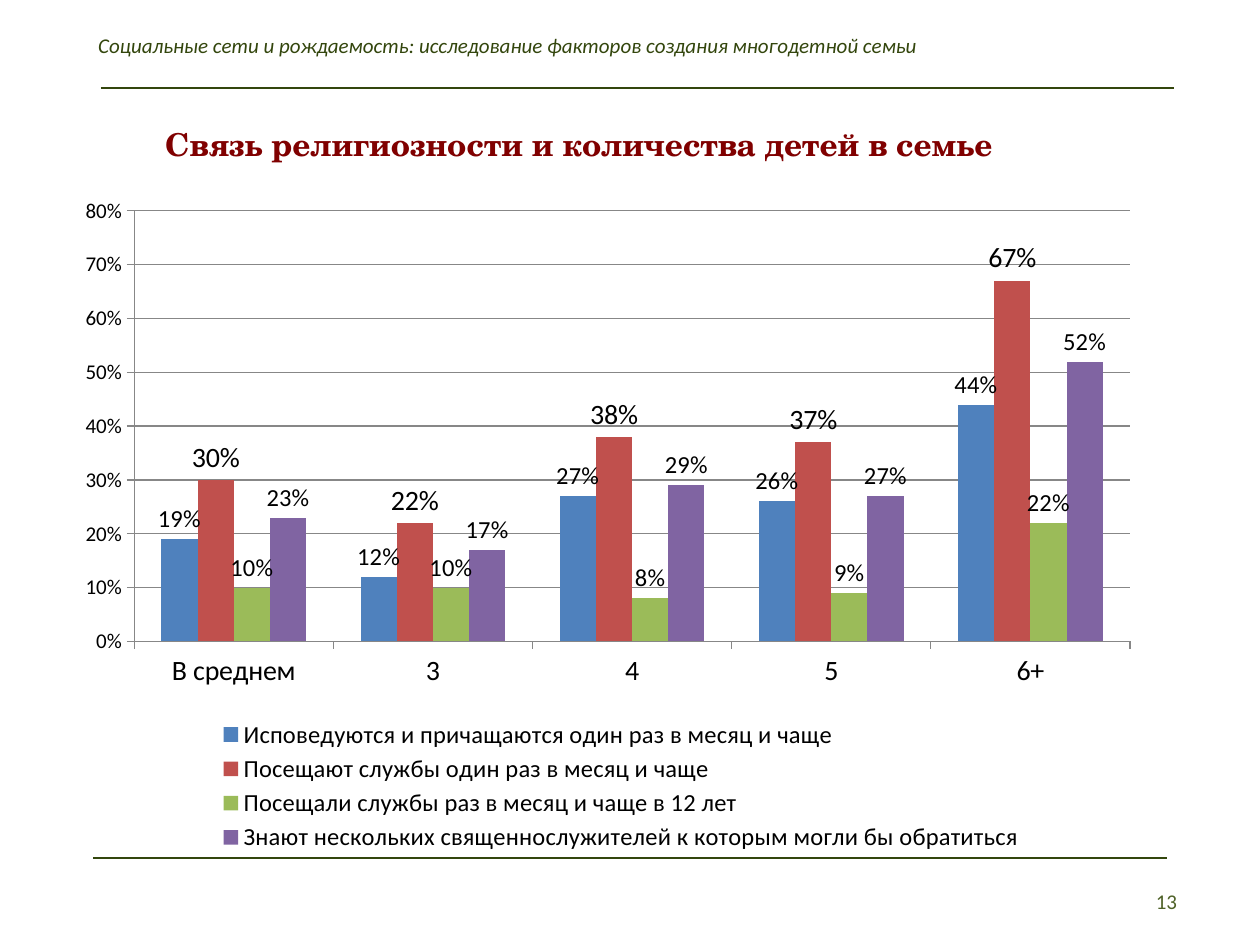
from lxml.etree import SubElement
from pptx import Presentation
from pptx.chart.data import CategoryChartData
from pptx.dml.color import RGBColor
from pptx.enum.chart import (XL_CHART_TYPE, XL_LABEL_POSITION,
                             XL_LEGEND_POSITION, XL_TICK_MARK)
from pptx.enum.shapes import MSO_CONNECTOR
from pptx.enum.text import MSO_ANCHOR, PP_ALIGN
from pptx.oxml import parse_xml
from pptx.oxml.ns import nsdecls, qn
from pptx.util import Pt

BLACK = RGBColor(0x00, 0x00, 0x00)
GREY = RGBColor(0x87, 0x87, 0x87)
OLIVE = RGBColor(0x33, 0x46, 0x0D)
GREEN = RGBColor(0x4F, 0x62, 0x28)
MAROON = RGBColor(0x80, 0x00, 0x00)

FAMILY_SIZES = ["В среднем", "3", "4", "5", "6+"]
# name, shares, colour, label size, label format
INDICATORS = [
    ("Исповедуются и причащаются один раз в месяц и чаще",
     (0.19, 0.12, 0.27, 0.26, 0.44), RGBColor(0x4F, 0x81, 0xBD), 14, "0%"),
    ("Посещают службы один раз в месяц и чаще",
     (0.30, 0.22, 0.38, 0.37, 0.67), RGBColor(0xC0, 0x50, 0x4D), 16, "0%"),
    ("Посещали службы раз в месяц и чаще в 12 лет",
     (0.10, 0.10, 0.08, 0.09, 0.22), RGBColor(0x9B, 0xBB, 0x59), 14, "0%"),
    ("Знают нескольких священнослужителей к которым могли бы обратиться",
     (0.23, 0.17, 0.29, 0.27, 0.52), RGBColor(0x80, 0x64, 0xA2), 14, "###0%"),
]


def set_layout(element, index, x, y, w, h, inner=False):
    """Fix a chart part's place, in fractions of the chart area."""
    for old_layout in element.findall(qn("c:layout")):
        element.remove(old_layout)
    target = '<c:layoutTarget val="inner"/>' if inner else ""
    element.insert(index, parse_xml(
        f'<c:layout {nsdecls("c")}><c:manualLayout>{target}'
        '<c:xMode val="edge"/><c:yMode val="edge"/>'
        f'<c:x val="{x}"/><c:y val="{y}"/><c:w val="{w}"/><c:h val="{h}"/>'
        '</c:manualLayout></c:layout>'))


class SlideBuilder:
    body_font = "Calibri"
    title_font = "TeX Gyre Schola"

    def __init__(self, slide):
        self.slide = slide

    def fill_text(self, shape, text, size, color, font=body_font,
                  align=PP_ALIGN.LEFT, anchor=MSO_ANCHOR.TOP,
                  bold=False, italic=False):
        frame = shape.text_frame
        frame.word_wrap = True
        frame.vertical_anchor = anchor
        paragraph = frame.paragraphs[0]
        paragraph.text = text
        paragraph.alignment = align
        style = paragraph.font
        style.name, style.size = font, Pt(size)
        style.bold, style.italic = bold, italic
        style.color.rgb = color

    def title(self, text, left, top, width, height):
        heading = self.slide.shapes.title
        heading.left, heading.top = Pt(left), Pt(top)
        heading.width, heading.height = Pt(width), Pt(height)
        self.fill_text(heading, text, 18, MAROON, self.title_font, bold=True)

    def text(self, text, left, top, width, height, color, **style):
        box = self.slide.shapes.add_textbox(Pt(left), Pt(top), Pt(width), Pt(height))
        self.fill_text(box, text, 12, color, **style)

    def rule(self, left, right, y):
        line = self.slide.shapes.add_connector(
            MSO_CONNECTOR.STRAIGHT, Pt(left), Pt(y), Pt(right), Pt(y))
        line.line.color.rgb = OLIVE
        line.line.width = Pt(1)
        SubElement(line._element.spPr, qn("a:effectLst"))

    def column_chart(self, categories, indicators, left, top, width, height):
        data = CategoryChartData(number_format="0%")
        data.categories = categories
        for name, shares, *_ in indicators:
            data.add_series(name, shares)
        chart = self.slide.shapes.add_chart(
            XL_CHART_TYPE.COLUMN_CLUSTERED, Pt(left), Pt(top),
            Pt(width), Pt(height), data).chart
        chart.has_title = False
        chart.font.name, chart.font.size = self.body_font, Pt(10)
        chart.font.color.rgb = BLACK

        plot = chart.plots[0]
        plot.gap_width, plot.overlap = 150, 0
        plot.vary_by_categories = False
        for series, (_, _, color, size, number_format) in zip(plot.series, indicators):
            series.format.fill.solid()
            series.format.fill.fore_color.rgb = color
            series.invert_if_negative = False
            labels = series.data_labels
            labels.show_value = True
            labels.position = XL_LABEL_POSITION.OUTSIDE_END
            labels.number_format = number_format
            labels.number_format_is_linked = False
            labels.font.size = Pt(size)

        for axis, size in ((chart.category_axis, 16), (chart.value_axis, 12)):
            axis.major_tick_mark = XL_TICK_MARK.OUTSIDE
            axis.tick_labels.font.size = Pt(size)
            axis.format.line.color.rgb = GREY
        shares_axis = chart.value_axis
        shares_axis.minimum_scale, shares_axis.maximum_scale = 0, 0.8
        shares_axis.major_unit = 0.1
        shares_axis.tick_labels.number_format = "0%"
        shares_axis.tick_labels.number_format_is_linked = False
        shares_axis.major_gridlines.format.line.color.rgb = GREY

        chart.has_legend = True
        legend = chart.legend
        legend.position = XL_LEGEND_POSITION.BOTTOM
        legend.include_in_layout = False
        legend.font.size = Pt(14)
        set_layout(legend._element, 1, 0.13, 0.79, 0.76, 0.21)
        plot_area = chart._chartSpace.chart.plotArea
        set_layout(plot_area, 0, 0.06, 0.04, 0.92, 0.64, inner=True)


def main():
    deck = Presentation()
    deck.slide_width, deck.slide_height = Pt(720), Pt(540)
    builder = SlideBuilder(deck.slides.add_slide(deck.slide_layouts[5]))
    builder.rule(53.3, 666.7, 490.3)
    builder.text("Социальные сети и рождаемость: исследование факторов "
                 "создания многодетной семьи", 49, 15.1, 618, 21.6, OLIVE, italic=True)
    builder.rule(57.6, 671, 50.4)
    builder.title("Связь религиозности и количества детей в семье",
                  87.1, 67.7, 545, 28.8)
    builder.text("13", 641.5, 500.4, 38.2, 28.8, GREEN,
                 align=PP_ALIGN.RIGHT, anchor=MSO_ANCHOR.MIDDLE)
    builder.column_chart(FAMILY_SIZES, INDICATORS, 39.6, 105.1, 618.5, 384.5)
    deck.save("out.pptx")


if __name__ == "__main__":
    main()
